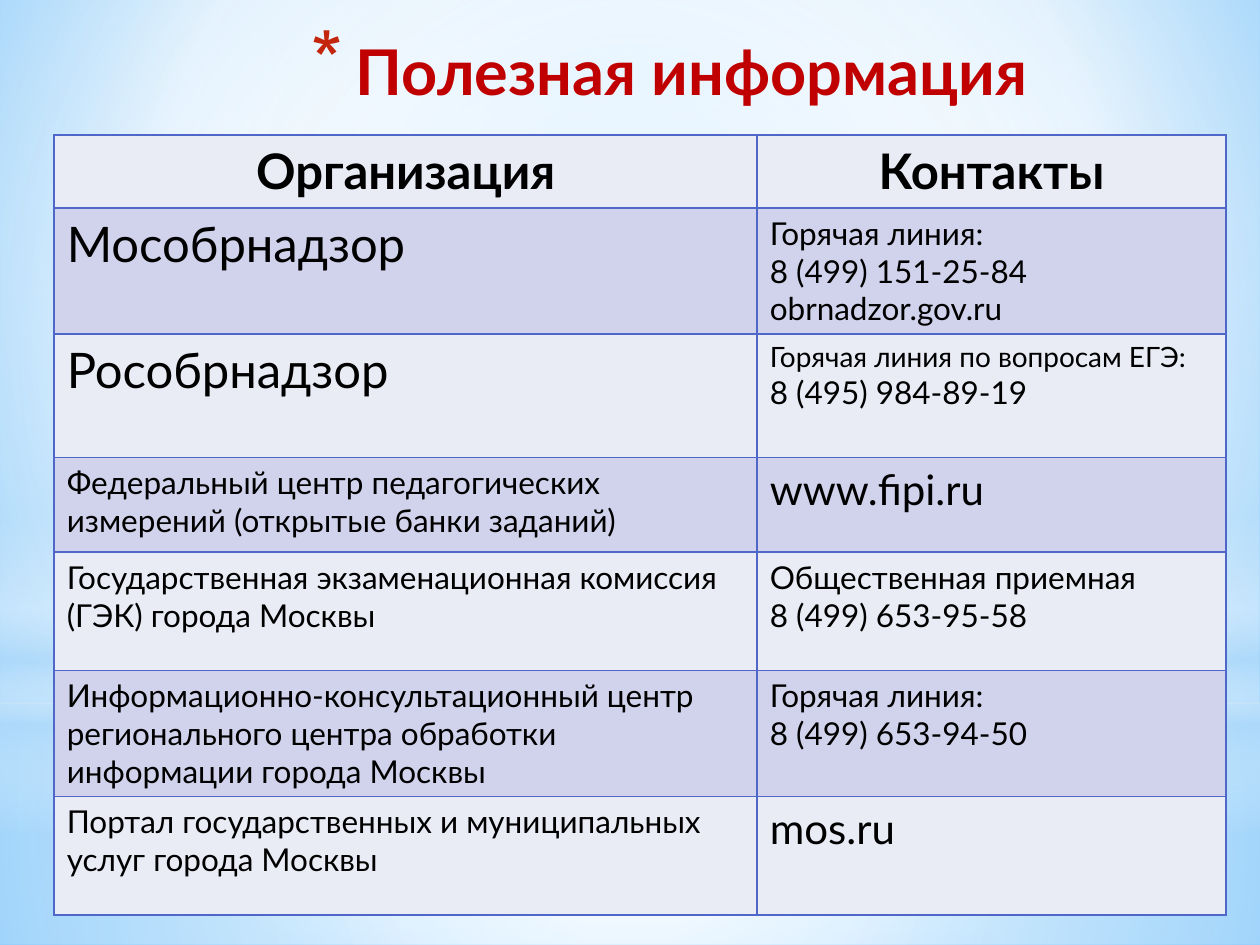
"""Build a slide with a table of useful contacts."""
import pptx
import pptx.util
from pptx.dml.color import RGBColor
from pptx.enum.shapes import MSO_SHAPE
from pptx.enum.text import PP_ALIGN
from pptx.oxml.ns import qn
from pptx.util import Inches
import lxml.etree as etree

FONT = "Lato"
RED = RGBColor(0xC0, 0x00, 0x00)
BULLET = RGBColor(0xC3, 0x26, 0x0C)
BLACK = RGBColor(0x00, 0x00, 0x00)
WHITE = RGBColor(0xFF, 0xFF, 0xFF)
SKY = RGBColor(0xB4, 0xDC, 0xFA)
SKY_MID = RGBColor(0x9E, 0xD5, 0xFF)
SKY_DEEP = RGBColor(0x5B, 0xB9, 0xFF)
BORDER = RGBColor(0x4E, 0x67, 0xC8)
BANDS = [RGBColor(0xE9, 0xEB, 0xF5), RGBColor(0xD0, 0xD3, 0xEB)]
CENTER = (50, 50, 50, 50)


def add(parent, tag, **attributes):
    child = etree.SubElement(parent, qn(tag))
    for name, value in attributes.items():
        child.set(name, str(value))
    return child


def set_gradient(fill, element, stops, focus=None):
    fill.gradient()
    grad = element.find(".//" + qn("a:gradFill"))
    for child in list(grad):
        grad.remove(child)
    stop_list = add(grad, "a:gsLst")
    for position, color, alpha in stops:
        stop = add(stop_list, "a:gs", pos=position * 1000)
        clr = add(stop, "a:srgbClr", val=color)
        if alpha < 100:
            add(clr, "a:alpha", val=alpha * 1000)
    if focus:
        circle = add(grad, "a:path", path="circle")
        add(circle, "a:fillToRect", **{k: v * 1000 for k, v in zip("ltrb", focus)})
    else:
        add(grad, "a:lin", ang=90 * 60000, scaled=0)


prs = pptx.Presentation()
prs.slide_width, prs.slide_height = Inches(10), Inches(7.5)
s = prs.slides.add_slide(prs.slide_layouts[6])
set_gradient(s.background.fill, s.element,
             [(0, SKY_MID, 100), (60, WHITE, 100), (100, SKY_DEEP, 100)],
             (20, 10, 20, 60))

glows = [
    (MSO_SHAPE.RECTANGLE, 5.58, 1.92,
     [(0, WHITE, 91), (37, WHITE, 76), (100, SKY, 79)], CENTER),
    (MSO_SHAPE.RECTANGLE, 0, 5.58,
     [(0, WHITE, 89), (48, WHITE, 62), (100, SKY, 79)], CENTER),
    (MSO_SHAPE.RECTANGLE, 4.12, 2.5,
     [(0, WHITE, 0), (29, WHITE, 30), (45, SKY, 40), (55, WHITE, 26),
      (65, SKY, 60), (100, WHITE, 0)], None),
    (MSO_SHAPE.OVAL, 1.75, 5.58, [(0, WHITE, 100), (56, WHITE, 0)], CENTER),
]
for kind, top, height, stops, focus in glows:
    sp = s.shapes.add_shape(kind, 0, Inches(top), Inches(10), Inches(height))
    sp.shadow.inherit = False
    sp.line.fill.background()
    set_gradient(sp.fill, sp.element, stops, focus)

title = s.shapes.add_textbox(Inches(0.63), Inches(0.21), Inches(9.37), Inches(0.94))
tf = title.text_frame
tf.word_wrap = True
tf.text = "Полезная информация"
p = tf.paragraphs[0]
p.alignment = PP_ALIGN.CENTER
font = p.runs[0].font
font.name, font.size, font.bold = FONT, pptx.util.Pt(36), True
font.color.rgb = RED
pPr = p._p.get_or_add_pPr()
pPr.set("marL", str(Inches(0.35)))
pPr.set("indent", str(-Inches(0.35)))
add(add(pPr, "a:buClr"), "a:srgbClr", val=BULLET)
add(pPr, "a:buSzPct", val=128000)
add(pPr, "a:buChar", char="*")

rows = [
    (0.58, [("Организация", 28)], [("Контакты", 28)]),
    (0.98, [("Мособрнадзор", 28)],
     [("Горячая линия:", 18), ("8 (499) 151-25-84", 18), ("obrnadzor.gov.ru", 18)]),
    (0.98, [("Рособрнадзор", 28)],
     [("Горячая линия по вопросам ЕГЭ:", 16), ("8 (495) 984-89-19", 18)]),
    (0.75, [("Федеральный центр педагогических измерений (открытые банки заданий)", 18)],
     [("www.fipi.ru", 24)]),
    (0.94, [("Государственная экзаменационная комиссия (ГЭК) города Москвы", 18)],
     [("Общественная приемная", 18), ("8 (499) 653-95-58", 18)]),
    (0.98, [("Информационно-консультационный центр регионального центра обработки "
             "информации города Москвы", 18)],
     [("Горячая линия:", 18), ("8 (499) 653-94-50", 18)]),
    (0.94, [("Портал государственных и муниципальных услуг города Москвы", 18)],
     [("mos.ru", 24)]),
]
table = s.shapes.add_table(len(rows), 2, Inches(0.43), Inches(1.07),
                           Inches(9.3), Inches(6.15)).table
table.columns[0].width, table.columns[1].width = Inches(5.58), Inches(3.72)
for i, (height, *contents) in enumerate(rows):
    table.rows[i].height = Inches(height)
    for j, lines in enumerate(contents):
        cell = table.cell(i, j)
        tf = cell.text_frame
        tf.text = "\n".join(text for text, size in lines)
        for p, (text, size) in zip(tf.paragraphs, lines):
            p.alignment = PP_ALIGN.CENTER if i == 0 else PP_ALIGN.LEFT
            font = p.runs[0].font
            font.name, font.size, font.bold = FONT, pptx.util.Pt(size), i == 0
            font.color.rgb = BLACK
        tcPr = cell._tc.get_or_add_tcPr()
        for side in ("a:lnL", "a:lnR", "a:lnT", "a:lnB"):
            ln = add(tcPr, side, w=pptx.util.Pt(1))
            add(add(ln, "a:solidFill"), "a:srgbClr", val=BORDER)
        cell.fill.solid()
        cell.fill.fore_color.rgb = BANDS[i % 2]

prs.save("out.pptx")
